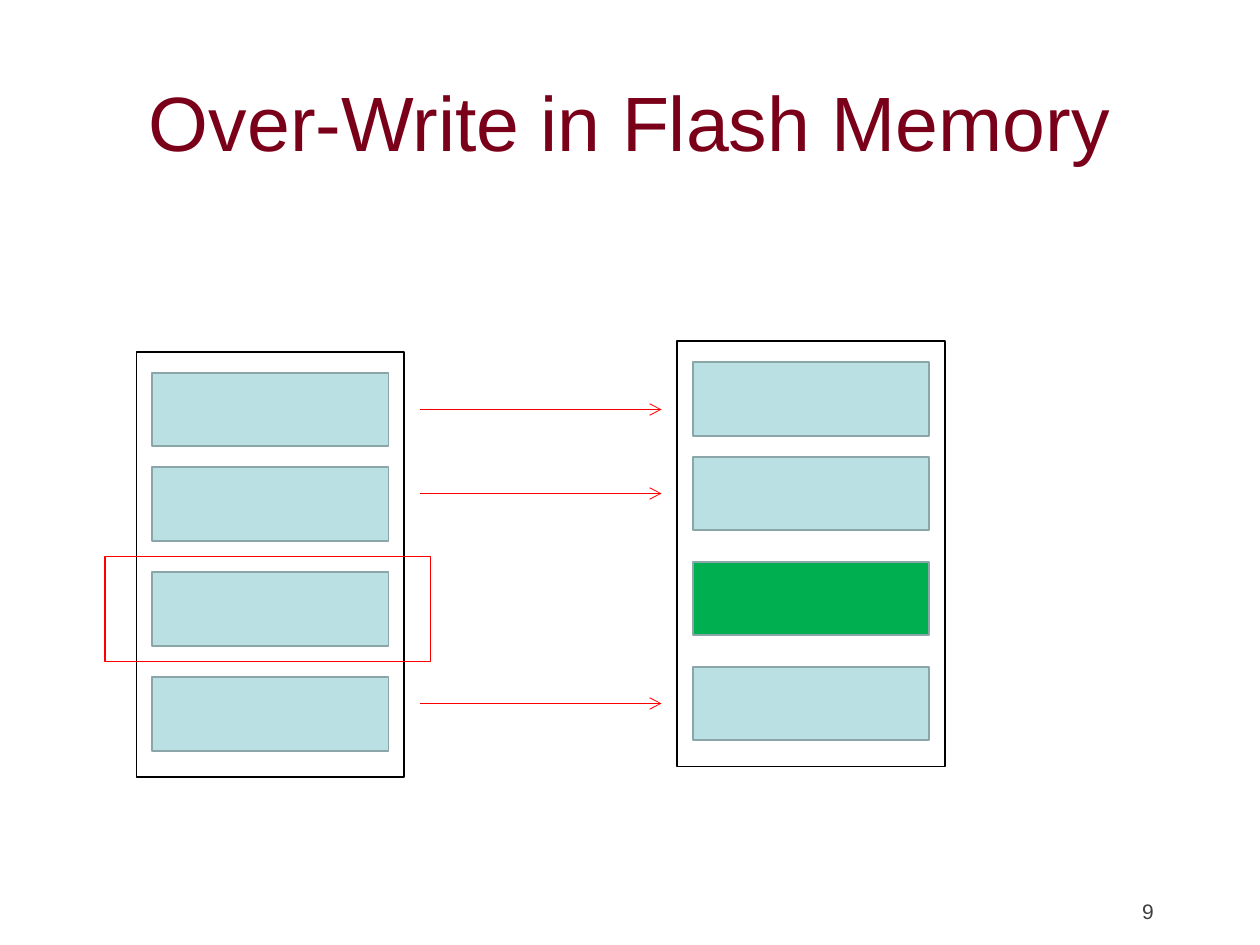
"""Build the slide showing how flash memory over-writes a page by copying its block."""
from dataclasses import dataclass
from typing import Optional

from lxml import etree
from pptx import Presentation
from pptx.dml.color import RGBColor
from pptx.enum.shapes import MSO_CONNECTOR, MSO_SHAPE
from pptx.enum.text import MSO_ANCHOR, PP_ALIGN
from pptx.oxml.ns import qn
from pptx.util import Emu, Pt

RECTANGLE = MSO_SHAPE.RECTANGLE
STRAIGHT = MSO_CONNECTOR.STRAIGHT
MIDDLE = MSO_ANCHOR.MIDDLE
LEFT = PP_ALIGN.LEFT
CENTER = PP_ALIGN.CENTER

MAROON = RGBColor(0x7A, 0x00, 0x19)
DARK_GRAY = RGBColor(0x3F, 0x3F, 0x3F)
BLACK = RGBColor(0x00, 0x00, 0x00)
RED = RGBColor(0xFF, 0x00, 0x00)
PALE_BLUE = RGBColor(0xBB, 0xE0, 0xE3)
GRAY_BLUE = RGBColor(0x8A, 0xA6, 0xA8)
GREEN = RGBColor(0x00, 0xB0, 0x50)

EMU_PER_PX = 7620
TITLE_FORMAT = {"name": "Arial", "size": Pt(44)}
NUMBER_FORMAT = {"name": "Arial", "size": Pt(12)}
PAGE_INSET = 15
PAGE_OFFSETS = (20, 110, 210, 310)
ARROW_LEVELS = (390, 470, 670)


@dataclass(frozen=True)
class Box:
    left: int
    top: int
    width: int
    height: int


@dataclass(frozen=True)
class Block:
    left: int
    top: int
    page_fills: tuple[RGBColor, ...]


BLOCKS = (
    Block(130, 335, (PALE_BLUE,) * 4),
    Block(645, 325, (PALE_BLUE, PALE_BLUE, GREEN, PALE_BLUE)),
)
TITLE_BOX = Box(90, 40, 1020, 150)
NUMBER_BOX = Box(1076, 850, 96, 36)
REWRITTEN_BOX = Box(100, 530, 310, 100)


def px(length: int) -> Emu:
    """Convert px to EMU."""
    return Emu(length * EMU_PER_PX)


def edges(box: Box) -> tuple[Emu, Emu, Emu, Emu]:
    """Return the place and size of a box in EMU."""
    return px(box.left), px(box.top), px(box.width), px(box.height)


def write(frame, text: str, color: RGBColor, align: PP_ALIGN, font_format: dict) -> None:
    """Put one formatted line of text in a frame."""
    frame.word_wrap = True
    paragraph = frame.paragraphs[0]
    paragraph.alignment = align
    run = paragraph.add_run()
    run.text = text
    for attribute, value in font_format.items():
        setattr(run.font, attribute, value)
    run.font.color.rgb = color


def add_rectangle(slide, box: Box, outline: RGBColor, fill: Optional[RGBColor] = None) -> None:
    """Draw an outlined rectangle, hollow unless a fill is given."""
    rectangle = slide.shapes.add_shape(RECTANGLE, *edges(box))
    rectangle.shadow.inherit = False
    if fill is None:
        rectangle.fill.background()
    else:
        rectangle.fill.solid()
        rectangle.fill.fore_color.rgb = fill
    rectangle.line.color.rgb = outline
    rectangle.line.width = Pt(1)


def add_block(slide, block: Block) -> None:
    """Draw a memory block and its pages."""
    add_rectangle(slide, Box(block.left, block.top, 255, 405), BLACK)
    for offset, fill in zip(PAGE_OFFSETS, block.page_fills):
        page = Box(block.left + PAGE_INSET, block.top + offset, 225, 70)
        add_rectangle(slide, page, GRAY_BLUE, fill)


def add_copy_arrow(slide, level: int) -> None:
    """Draw an arrow from the old block to the new one."""
    arrow = slide.shapes.add_connector(STRAIGHT, px(400), px(level), px(630), px(level))
    arrow.line.color.rgb = RED
    arrow.line.width = Pt(0.5)
    etree.SubElement(arrow.line._get_or_add_ln(), qn("a:tailEnd"), type="arrow")
    etree.SubElement(arrow._element.spPr, qn("a:effectLst"))


def main() -> None:
    """Build and save the slide."""
    deck = Presentation()
    deck.slide_width, deck.slide_height = px(1200), px(900)
    slide = deck.slides.add_slide(deck.slide_layouts[5])

    title = slide.shapes.title
    title.left, title.top, title.width, title.height = edges(TITLE_BOX)
    title.text_frame.vertical_anchor = MIDDLE
    write(title.text_frame, "Over-Write in Flash Memory", MAROON, CENTER, TITLE_FORMAT)

    slide_number = slide.shapes.add_textbox(*edges(NUMBER_BOX))
    write(slide_number.text_frame, "9", DARK_GRAY, LEFT, NUMBER_FORMAT)

    for block in BLOCKS:
        add_block(slide, block)
    add_rectangle(slide, REWRITTEN_BOX, RED)
    for level in ARROW_LEVELS:
        add_copy_arrow(slide, level)

    deck.save("out.pptx")


if __name__ == "__main__":
    main()
